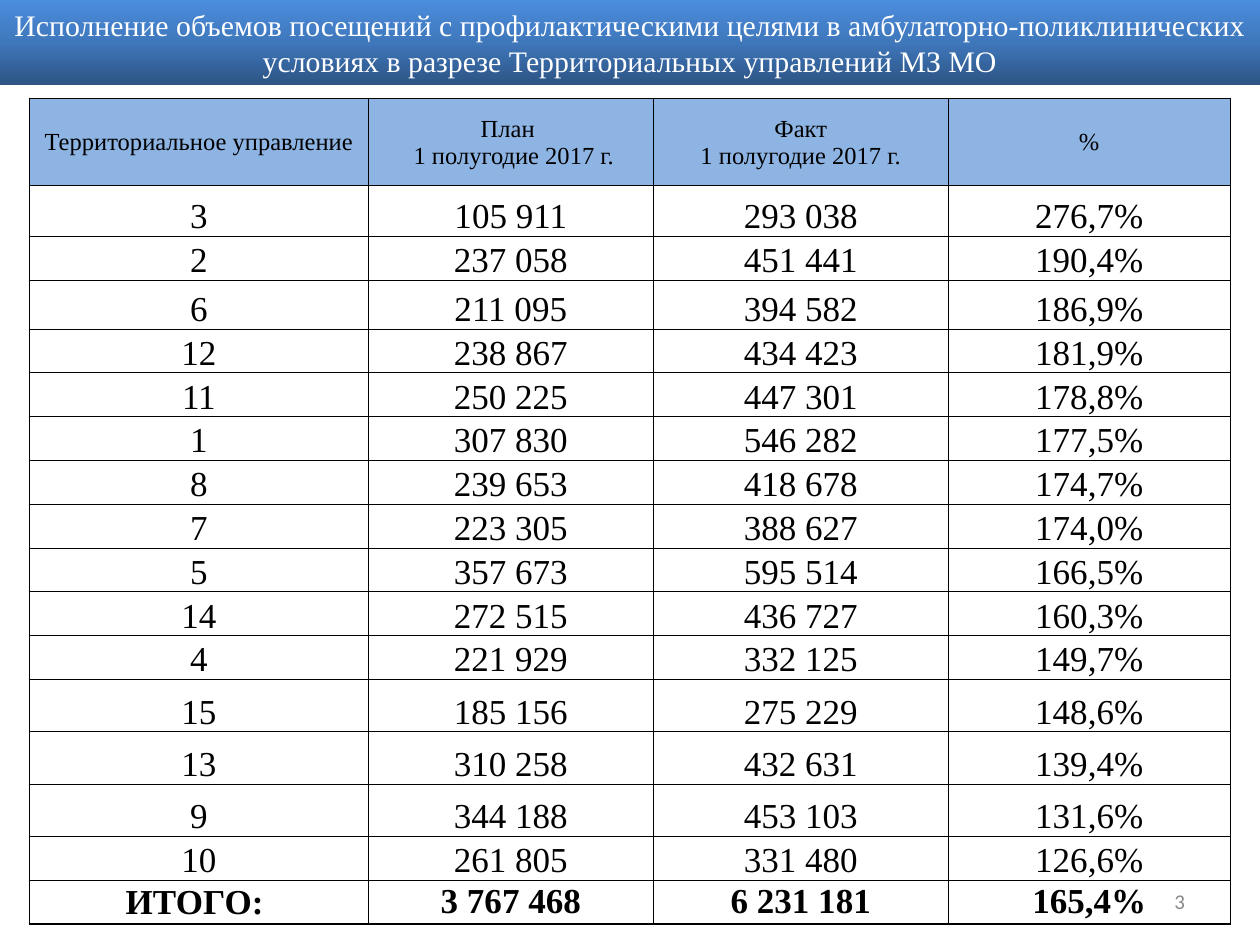
"""Builds a slide with a table of preventive visits by territorial department."""
from copy import deepcopy

from lxml import etree
from pptx import Presentation
from pptx.dml.color import RGBColor
from pptx.enum.shapes import MSO_SHAPE
from pptx.enum.text import MSO_ANCHOR, PP_ALIGN
from pptx.oxml.ns import qn
from pptx.util import Pt

RECTANGLE = MSO_SHAPE.RECTANGLE
MIDDLE, BOTTOM = MSO_ANCHOR.MIDDLE, MSO_ANCHOR.BOTTOM
CENTER, RIGHT = PP_ALIGN.CENTER, PP_ALIGN.RIGHT

WHITE = RGBColor(0xFF, 0xFF, 0xFF)
BLACK = RGBColor(0x00, 0x00, 0x00)
GRAY = RGBColor(0x89, 0x89, 0x89)
HEADER_BLUE = RGBColor(0x8E, 0xB4, 0xE3)
BANNER_COLORS = (
    RGBColor(0x2D, 0x54, 0x84),
    RGBColor(0x3F, 0x77, 0xBB),
    RGBColor(0x4B, 0x8D, 0xDE),
)

TITLE = (
    "Исполнение объемов посещений с профилактическими целями в "
    "амбулаторно-поликлинических условиях в разрезе Территориальных управлений МЗ МО"
)
HEADER = (
    "Территориальное управление",
    "План \v 1 полугодие 2017 г.",
    "Факт\v1 полугодие 2017 г.",
    "%",
)
DEPARTMENTS = (
    ("3", "105 911", "293 038", "276,7%"),
    ("2", "237 058", "451 441", "190,4%"),
    ("6", "211 095", "394 582", "186,9%"),
    ("12", "238 867", "434 423", "181,9%"),
    ("11", "250 225", "447 301", "178,8%"),
    ("1", "307 830", "546 282", "177,5%"),
    ("8", "239 653", "418 678", "174,7%"),
    ("7", "223 305", "388 627", "174,0%"),
    ("5", "357 673", "595 514", "166,5%"),
    ("14", "272 515", "436 727", "160,3%"),
    ("4", "221 929", "332 125", "149,7%"),
    ("15", "185 156", "275 229", "148,6%"),
    ("13", "310 258", "432 631", "139,4%"),
    ("9", "344 188", "453 103", "131,6%"),
    ("10", "261 805", "331 480", "126,6%"),
)
TOTAL = ("ИТОГО: ", "3 767 468", "6 231 181", "165,4%")

COLUMN_WIDTHS = (193.7, 162.8, 168.6, 161.1)
ROW_HEIGHT = 25.05
TALL_ROWS = {0: 49.7, 1: 29.1, 3: 28, 12: 29.9, 13: 29.9, 14: 29.9}


class SlideBuilder:
    """Holds the style and the current slide."""

    font = "Times New Roman"
    number_font = "Calibri"
    inset = 0.72

    def __init__(self, page):
        self.page = page

    def set_text(self, frame, text, size, color, align=CENTER, font=None, bold=False):
        """Put one formatted paragraph into a text frame."""
        frame.word_wrap = True
        para = frame.paragraphs[0]
        para.text = text
        para.alignment = align
        para.font.name = font or self.font
        para.font.size = Pt(size)
        para.font.bold = bold
        para.font.color.rgb = color

    def banner(self, left, top, width, height, text):
        """Add the title bar with an upward three-colour gradient."""
        bar = self.page.shapes.add_shape(
            RECTANGLE, Pt(left), Pt(top), Pt(width), Pt(height))
        bar.shadow.inherit = False
        bar.line.fill.background()
        bar.fill.gradient()
        bar.fill.gradient_angle = 90
        first = bar._element.spPr.find(".//" + qn("a:gs"))
        first.addnext(deepcopy(first))
        for index, (stop, color) in enumerate(zip(bar.fill.gradient_stops, BANNER_COLORS)):
            stop.position = index / 2
            stop.color.rgb = color
        bar.text_frame.vertical_anchor = MIDDLE
        self.set_text(bar.text_frame, text, 17, WHITE)

    def page_number(self, left, top, width, height, text):
        """Add the slide number."""
        box = self.page.shapes.add_textbox(Pt(left), Pt(top), Pt(width), Pt(height))
        box.text_frame.vertical_anchor = MIDDLE
        self.set_text(box.text_frame, text, 12, GRAY, RIGHT, self.number_font)

    def border(self, cell, widths):
        """Draw the left, right, top and bottom edges of a cell."""
        properties = cell._tc.get_or_add_tcPr()
        for index, (side, width) in enumerate(zip("LRTB", widths)):
            edge = etree.Element(qn(f"a:ln{side}"), w=str(Pt(width)))
            fill = etree.SubElement(edge, qn("a:solidFill"))
            etree.SubElement(fill, qn("a:srgbClr"), val=str(BLACK))
            properties.insert(index, edge)

    def table(self, left, top, rows):
        """Add the table with a header row and a bold total row."""
        heights = [TALL_ROWS.get(index, ROW_HEIGHT) for index in range(len(rows))]
        frame = self.page.shapes.add_table(
            len(rows), len(COLUMN_WIDTHS), Pt(left), Pt(top),
            Pt(sum(COLUMN_WIDTHS)), Pt(sum(heights)))
        grid = frame.table
        grid.horz_banding = False
        for column, width in zip(grid.columns, COLUMN_WIDTHS):
            column.width = Pt(width)
        for row, height in zip(grid.rows, heights):
            row.height = Pt(height)
        last = len(rows) - 1
        for r, texts in enumerate(rows):
            for c, text in enumerate(texts):
                cell = grid.cell(r, c)
                inset = 0 if r == last and c else self.inset
                cell.margin_left = cell.margin_right = cell.margin_top = Pt(inset)
                cell.margin_bottom = Pt(0)
                cell.vertical_anchor = MIDDLE if r in (0, last) else BOTTOM
                if r == 0:
                    cell.fill.solid()
                    cell.fill.fore_color.rgb = HEADER_BLUE
                else:
                    cell.fill.background()
                self.set_text(cell.text_frame, text, 20 if r else 14, BLACK, bold=r == last)
                self.border(cell, (0.5 if c else 1, 0.5, 0.5 if r else 1,
                                   1 if r == last else 0.5))


def main():
    """Build and save the deck."""
    deck = Presentation()
    deck.slide_width, deck.slide_height = Pt(720), Pt(540)
    builder = SlideBuilder(deck.slides.add_slide(deck.slide_layouts[6]))
    builder.page_number(516.2, 500.5, 168, 28.75, "3")
    builder.table(16.8, 56.2, (HEADER, *DEPARTMENTS, TOTAL))
    builder.banner(0, 0, 720, 48.5, TITLE)
    deck.save("out.pptx")


if __name__ == "__main__":
    main()
